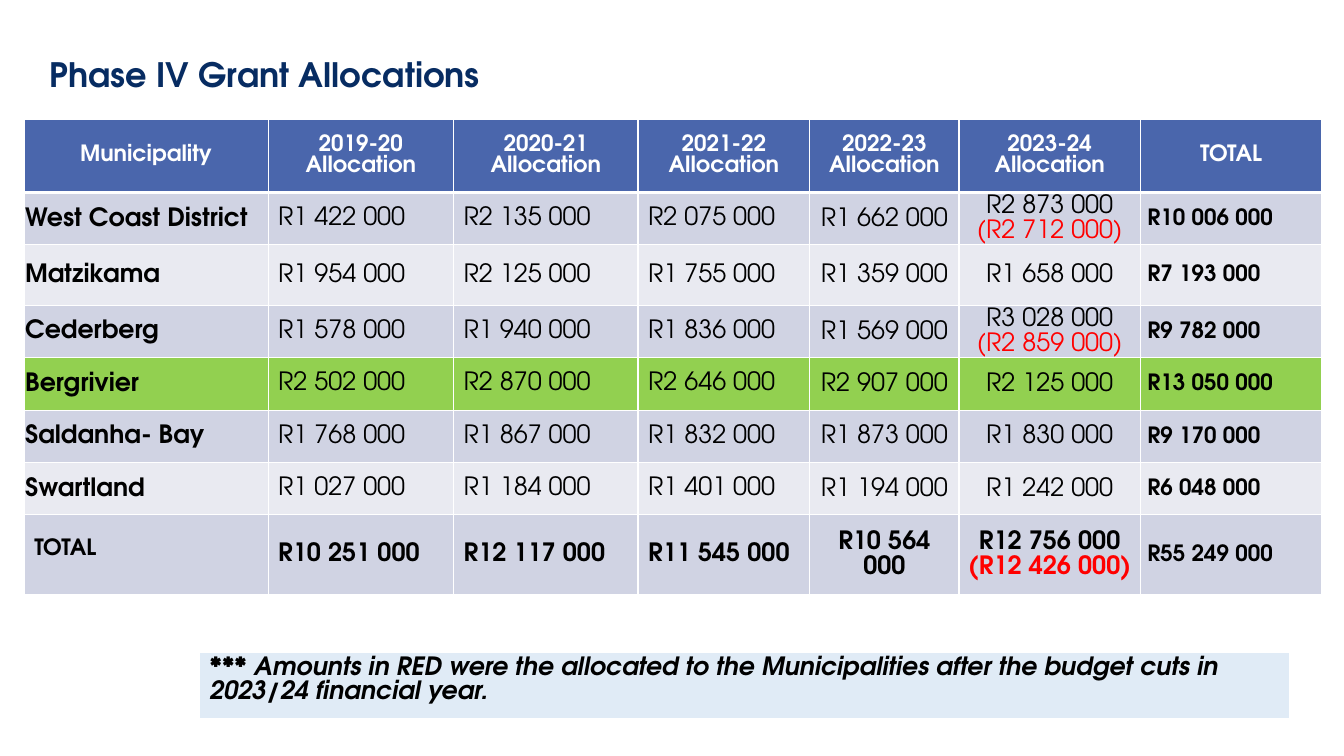
"""Build the slide of Phase IV grant allocations per municipality."""
from lxml.etree import SubElement as Sub
from pptx import Presentation
from pptx.dml.color import RGBColor as Color
from pptx.enum.text import MSO_ANCHOR as Anchor, PP_ALIGN as Align
from pptx.oxml.ns import qn
from pptx.util import Inches, Pt

WIDE, HIGH = Inches(13.33), Inches(7.5)
THEME = {
    "font": "TeX Gyre Adventor", "title": Pt(24), "body": Pt(18), "small": Pt(16),
    "navy": "072C62", "head": "4A66AC", "dark": "D0D3E3", "light": "E9EAF1",
    "mark": "92D050", "note": "E0EBF6", "white": "FFFFFF", "ink": "000000",
    "cut": "FF0000",
}
COLS = (18.15, 13.8, 13.73, 12.78, 11.1, 13.5, 13.49)
ROWS = (9.73, 6.93, 8, 6.93, 6.93, 6.93, 6.93, 10.53)
FILLS = ("head", "dark", "light", "dark", "mark", "dark", "light", "dark")
YEARS = ("2019-20", "2020-21", "2021-22", "2022-23", "2023-24")
GRANTS = (
    ("Municipality", *(f"{year} Allocation" for year in YEARS), "TOTAL"),
    ("West Coast District", "R1 422 000", "R2 135 000", "R2 075 000",
     "R1 662 000", "R2 873 000\n(R2 712 000)", "R10 006 000"),
    ("Matzikama", "R1 954 000", "R2 125 000", "R1 755 000",
     "R1 359 000", "R1 658 000", "R7 193 000"),
    ("Cederberg", "R1 578 000", "R1 940 000", "R1 836 000",
     "R1 569 000", "R3 028 000\n(R2 859 000)", "R9 782 000"),
    ("Bergrivier", "R2 502 000", "R2 870 000", "R2 646 000",
     "R2 907 000", "R2 125 000", "R13 050 000"),
    ("Saldanha- Bay", "R1 768 000", "R1 867 000", "R1 832 000",
     "R1 873 000", "R1 830 000", "R9 170 000"),
    ("Swartland", "R1 027 000", "R1 184 000", "R1 401 000",
     "R1 194 000", "R1 242 000", "R6 048 000"),
    ("TOTAL", "R10 251 000", "R12 117 000", "R11 545 000",
     "R10 564 000", "R12 756 000\n(R12 426 000)", "R55 249 000"),
)
NOTE = ("*** Amounts in RED were the allocated to the Municipalities after "
        "the budget cuts in 2023/24 financial year.")


def across(share):
    """Turn a percentage of the slide's width into a length."""
    return int(WIDE * share / 100)


def down(share):
    """Turn a percentage of the slide's height into a length."""
    return int(HIGH * share / 100)


def apply(item, values):
    """Set each attribute of the item from a dict."""
    for name, value in values.items():
        setattr(item, name, value)


def write(frame, text, color, form, para):
    """Fill a text frame, with amounts in brackets in red."""
    frame.text = text
    for line in frame.paragraphs:
        apply(line, para)
        for run in line.runs:
            apply(run.font, {"name": THEME["font"], **form})
            shade = "cut" if run.text.startswith("(") else color
            run.font.color.rgb = Color.from_string(THEME[shade])


def paint(cell, fill, edges):
    """Give a cell its fill and white edges, by side and width."""
    cell.fill.solid()
    cell.fill.fore_color.rgb = Color.from_string(THEME[fill])
    props = cell._tc.get_or_add_tcPr()
    for place, (side, width) in enumerate(edges.items()):
        edge = Sub(props, qn(f"a:ln{side}"), w=str(Pt(width)))
        Sub(Sub(edge, qn("a:solidFill")), qn("a:srgbClr"), val=THEME["white"])
        props.insert(place, edge)


def inset(cell, left, top, right, base):
    """Set the four margins of a cell in inches."""
    apply(cell, {"margin_left": Inches(left), "margin_top": Inches(top),
                 "margin_right": Inches(right), "margin_bottom": Inches(base)})


def add_grid(slide, left, top, cols, rows):
    """Add a table whose columns and rows are shares of the slide."""
    grid = slide.shapes.add_table(
        len(rows), len(cols), across(left), down(top),
        across(sum(cols)), down(sum(rows))).table
    for col, share in zip(grid.columns, cols):
        col.width = across(share)
    for row, share in zip(grid.rows, rows):
        row.height = down(share)
    return grid


def add_title(slide, text):
    """Move and format the title placeholder."""
    title = slide.shapes.title
    apply(title, {"left": across(2.93), "top": down(6.4),
                  "width": across(34.21), "height": down(6.67)})
    apply(title.text_frame, {"word_wrap": False, "vertical_anchor": Anchor.MIDDLE})
    write(title.text_frame, text, "navy",
          {"size": THEME["title"], "bold": True}, {"alignment": Align.LEFT})


def fill_cell(cell, text, row, col):
    """Write and format one cell by its place in the table."""
    head, total = row == 0, row == len(ROWS) - 1
    last = col == len(COLS) - 1
    small = head or last or (total and col == 0)
    form = {"size": THEME["small" if small else "body"],
            "bold": head or total or last or col == 0}
    para = {"alignment": Align.CENTER if head or col in (4, 5) else Align.LEFT}
    cell.vertical_anchor = Anchor.MIDDLE
    if col > 3 and not head:
        para["line_spacing"] = 1.07
        inset(cell, 0.07, 0, 0.07, 0)
    elif col == 0 and total:
        inset(cell, 0.1, 0.05, 0.1, 0.15)
    elif col == 0 and not head:
        inset(cell, 0.01, 0.01, 0.01, 0)
    write(cell.text_frame, text, "white" if head else "ink", form, para)
    edges = {"L": 1, "R": 1, "T": 3 if row == 1 else 1, "B": 3 if head else 1}
    paint(cell, FILLS[row], edges)


def add_grants(slide):
    """Add the table of allocations."""
    grid = add_grid(slide, 1.8, 15.73, COLS, ROWS)
    for row, texts in enumerate(GRANTS):
        for col, text in enumerate(texts):
            fill_cell(grid.cell(row, col), text, row, col)


def add_note(slide):
    """Add the shaded note below the allocations."""
    cell = add_grid(slide, 14.85, 86.27, (81.1,), (8.93,)).cell(0, 0)
    write(cell.text_frame, NOTE, "ink",
          {"size": THEME["body"], "bold": True, "italic": True}, {})
    paint(cell, "note", {"L": 1, "R": 1, "T": 1, "B": 3})


def main():
    """Build and save the slide."""
    deck = Presentation()
    apply(deck, {"slide_width": WIDE, "slide_height": HIGH})
    slide = deck.slides.add_slide(deck.slide_layouts[5])
    add_title(slide, "Phase IV Grant Allocations")
    add_grants(slide)
    add_note(slide)
    deck.save("out.pptx")


if __name__ == "__main__":
    main()
